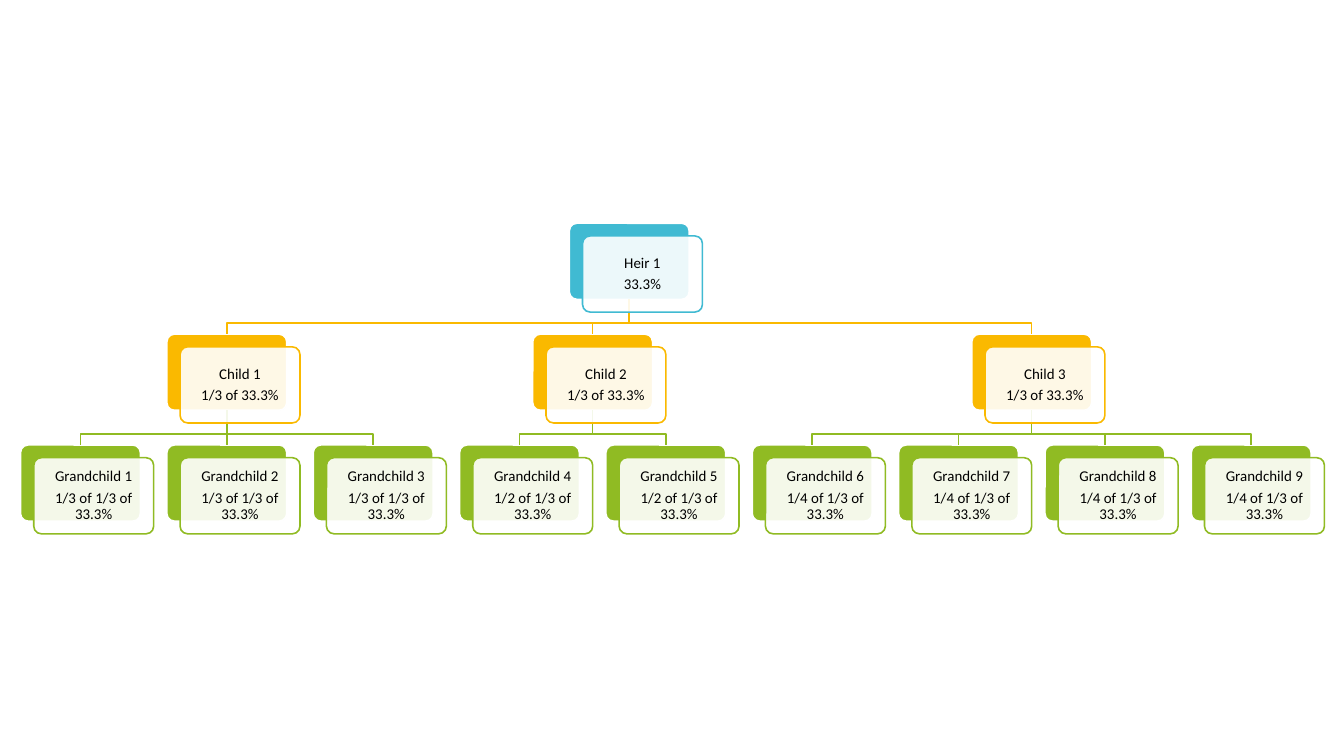
from lxml import etree
from pptx import Presentation
from pptx.dml.color import RGBColor
from pptx.enum.shapes import MSO_CONNECTOR, MSO_SHAPE
from pptx.enum.text import MSO_ANCHOR, PP_ALIGN
from pptx.oxml.ns import qn
from pptx.util import Pt

STRAIGHT = MSO_CONNECTOR.STRAIGHT
ROUNDED = MSO_SHAPE.ROUNDED_RECTANGLE
MIDDLE = MSO_ANCHOR.MIDDLE
CENTER = PP_ALIGN.CENTER

BLUE = RGBColor(0x40, 0xBA, 0xD2)
YELLOW = RGBColor(0xFA, 0xB9, 0x00)
GREEN = RGBColor(0x90, 0xBB, 0x23)
WHITE = RGBColor(0xFF, 0xFF, 0xFF)
BLACK = RGBColor(0x00, 0x00, 0x00)
LEVEL_COLORS = [BLUE, YELLOW, GREEN]

LEFT, TOP = 11, 119.6
COLUMN_PITCH, ROW_PITCH = 78.4, 59.4
BOX_WIDTH, BOX_HEIGHT = 64.2, 40.8
CARD_SHIFT_X, CARD_SHIFT_Y = 7.1, 6.8
BEND_GAP = 6
LINE_WIDTH = Pt(0.85)

FRAME_FORMAT = {
    "word_wrap": True,
    "vertical_anchor": MIDDLE,
    "margin_left": Pt(2.2),
    "margin_right": Pt(2.2),
    "margin_top": Pt(2.2),
    "margin_bottom": Pt(2.2),
}
PARA_FORMAT = {"alignment": CENTER, "line_spacing": 0.9, "space_after": Pt(2.8)}
FONT_FORMAT = {"name": "Calibri", "size": Pt(8)}

FAMILIES = [("1/3", 3), ("1/2", 2), ("1/4", 4)]


def apply_format(target, values):
    for name, value in values.items():
        setattr(target, name, value)


def add_box(shapes, left, top, fill_color, line_color):
    box = shapes.add_shape(ROUNDED, Pt(left), Pt(top), Pt(BOX_WIDTH), Pt(BOX_HEIGHT))
    box.adjustments[0] = 0.1
    box.shadow.inherit = False
    box.fill.solid()
    box.fill.fore_color.rgb = fill_color
    box.line.color.rgb = line_color
    box.line.width = LINE_WIDTH
    return box


deck = Presentation()
deck.slide_width = Pt(720)
deck.slide_height = Pt(405)
page = deck.slides.add_slide(deck.slide_layouts[6])
shapes = page.shapes

children = []
grandchildren = []
for family, (share, count) in enumerate(FAMILIES):
    first = len(grandchildren)
    children.append((1, first + (count - 1) / 2, 0, f"Child {family + 1}", "1/3 of 33.3%"))
    for column in range(first, first + count):
        grandchildren.append(
            (2, column, family + 1, f"Grandchild {column + 1}", f"{share} of 1/3 of 33.3%")
        )
heir_column = (children[0][1] + children[-1][1]) / 2
people = [(0, heir_column, None, "Heir 1", "33.3%"), *children, *grandchildren]

backs = []
for level, column, parent, name, share in people:
    left = LEFT + column * COLUMN_PITCH
    top = TOP + level * ROW_PITCH
    backs.append(add_box(shapes, left, top, LEVEL_COLORS[level], WHITE))

for back, (level, column, parent, name, share) in zip(backs, people):
    if parent is None:
        continue
    parent_column = people[parent][1]
    start_x = Pt(LEFT + parent_column * COLUMN_PITCH + BOX_WIDTH / 2)
    start_y = Pt(TOP + (level - 1) * ROW_PITCH + BOX_HEIGHT)
    end_x = Pt(LEFT + column * COLUMN_PITCH + BOX_WIDTH / 2)
    end_y = Pt(TOP + level * ROW_PITCH)
    if column == parent_column:
        link = shapes.add_connector(STRAIGHT, start_x, start_y, end_x, end_y)
        link.begin_connect(backs[parent], 2)
        link.end_connect(back, 0)
        etree.SubElement(link._element.spPr, qn("a:effectLst"))
    else:
        bend_y = end_y - Pt(BEND_GAP)
        outline = shapes.build_freeform(start_x, start_y)
        outline.add_line_segments(
            [(start_x, bend_y), (end_x, bend_y), (end_x, end_y)], close=False
        )
        link = outline.convert_to_shape()
        link.fill.background()
        link.shadow.inherit = False
    link.line.color.rgb = LEVEL_COLORS[level]
    link.line.width = LINE_WIDTH

for level, column, parent, name, share in people:
    left = LEFT + column * COLUMN_PITCH + CARD_SHIFT_X
    top = TOP + level * ROW_PITCH + CARD_SHIFT_Y
    card = add_box(shapes, left, top, WHITE, LEVEL_COLORS[level])
    fill_color = card._element.spPr.find(qn("a:solidFill")).find(qn("a:srgbClr"))
    etree.SubElement(fill_color, qn("a:alpha"), val="90000")
    frame = card.text_frame
    apply_format(frame, FRAME_FORMAT)
    for para, text in zip([frame.paragraphs[0], frame.add_paragraph()], [name, share]):
        apply_format(para, PARA_FORMAT)
        span = para.add_run()
        span.text = text
        apply_format(span.font, FONT_FORMAT)
        span.font.color.rgb = BLACK

deck.save("out.pptx")
